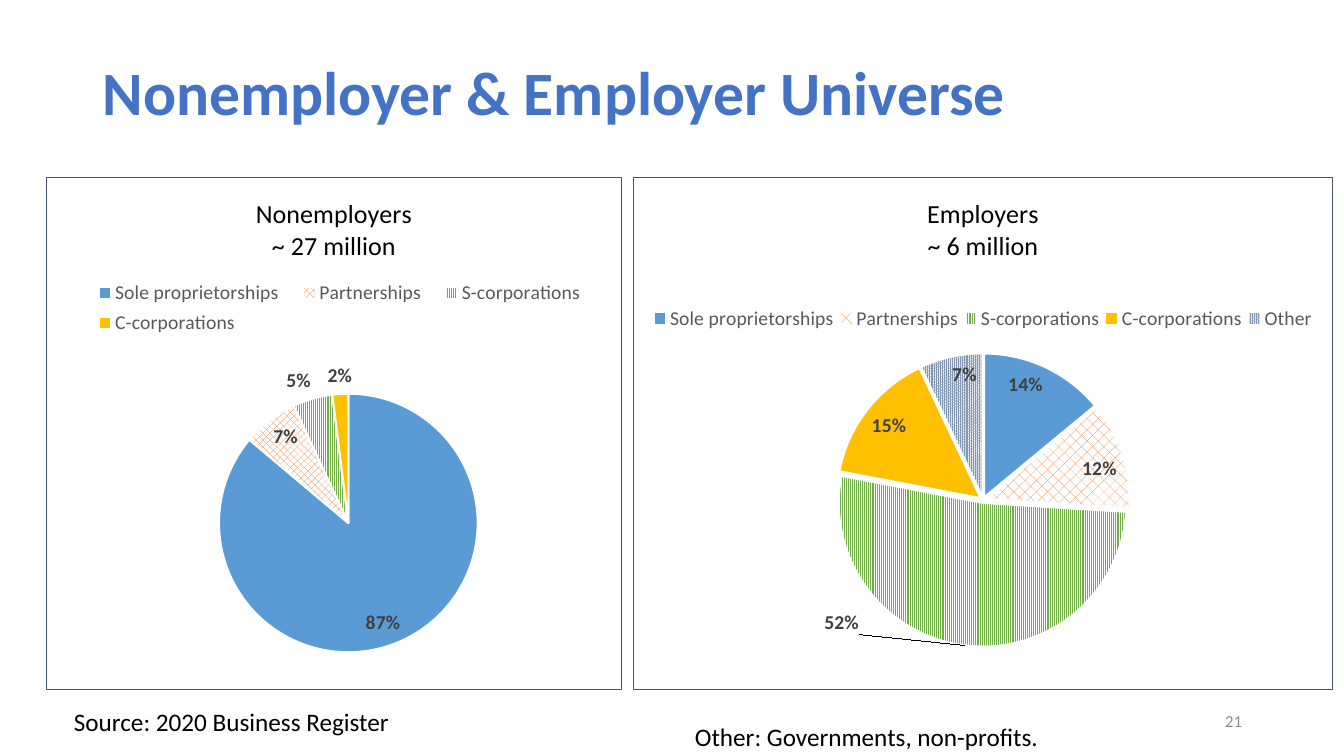
from lxml import etree
from pptx import Presentation
from pptx.chart.data import CategoryChartData
from pptx.dml.color import RGBColor
from pptx.enum.chart import XL_CHART_TYPE, XL_LABEL_POSITION, XL_LEGEND_POSITION
from pptx.enum.dml import MSO_PATTERN
from pptx.enum.text import MSO_ANCHOR, PP_ALIGN
from pptx.oxml import parse_xml
from pptx.oxml.ns import nsdecls, qn
from pptx.util import Emu, Pt

SCALE = 914400 / 100.8
FONT = "Calibri"
PIE = XL_CHART_TYPE.PIE
TOP = XL_LEGEND_POSITION.TOP
IN, OUT = XL_LABEL_POSITION.INSIDE_END, XL_LABEL_POSITION.OUTSIDE_END
P25, P50, P90 = MSO_PATTERN.PERCENT_25, MSO_PATTERN.PERCENT_50, MSO_PATTERN.PERCENT_90
VERT = MSO_PATTERN.NARROW_VERTICAL
LEFT, RIGHT = PP_ALIGN.LEFT, PP_ALIGN.RIGHT
ANCHOR_TOP, MIDDLE = MSO_ANCHOR.TOP, MSO_ANCHOR.MIDDLE

NONEMPLOYERS = [
    ("Sole proprietorships", 0.87, "5B9BD5", None, IN),
    ("Partnerships", 0.07, "ED7D31", P50, IN),
    ("S-corporations", 0.05, "70AD47", VERT, OUT),
    ("C-corporations", 0.02, "FFC000", None, OUT),
]
EMPLOYERS = [
    ("Sole proprietorships", 0.14, "5B9BD5", None, IN),
    ("Partnerships", 0.12, "ED7D31", P25, IN),
    ("S-corporations", 0.52, "70AD47", VERT, OUT),
    ("C-corporations", 0.15, "FFC000", None, IN),
    ("Other", 0.07, "8497B0", P90, IN),
]


def px(n):
    """Turn pixels into EMU."""
    return Emu(round(n * SCALE))


def rgb(value):
    """Turn a hex string into a colour."""
    return RGBColor.from_string(value)


def style(font, size, color, bold=False):
    """Set typeface, size, colour and weight of a font."""
    font.name, font.size, font.bold = FONT, Pt(size), bold
    font.color.rgb = rgb(color)


def add_text(slide, box, text, size, color="000000", bold=False,
             align=LEFT, anchor=ANCHOR_TOP, spacing=None):
    """Place one line of text in a box."""
    tf = slide.shapes.add_textbox(*map(px, box)).text_frame
    tf.word_wrap, tf.vertical_anchor = True, anchor
    p = tf.paragraphs[0]
    p.alignment, p.line_spacing = align, spacing
    r = p.add_run()
    r.text = text
    style(r.font, size, color, bold)


def set_layout(parent, index, values, inner=False):
    """Give a chart part a manual layout in fractions of the chart."""
    for old in parent.findall(qn("c:layout")):
        parent.remove(old)
    layout = parse_xml(f"<c:layout {nsdecls('c')}><c:manualLayout/></c:layout>")
    items = [("layoutTarget", "inner")] if inner else []
    if len(values) == 4:
        items += [("xMode", "edge"), ("yMode", "edge")]
    items += zip("xywh", values)
    for tag, value in items:
        etree.SubElement(layout[0], qn(f"c:{tag}")).set("val", str(value))
    parent.insert(index, layout)


def style_slices(series, slices):
    """Fill each slice and place its label."""
    for i, (_, _, color, pattern, position) in enumerate(slices):
        point = series.points[i]
        fill = point.format.fill
        if pattern is None:
            fill.solid()
        else:
            fill.patterned()
            fill.pattern = pattern
            fill.back_color.rgb = rgb("FFFFFF")
        fill.fore_color.rgb = rgb(color)
        point.format.line.color.rgb = rgb("FFFFFF")
        point.format.line.width = Pt(1.5)
        style(point.data_label.font, 14, "404040", True)
        point.data_label.position = position
    labels = series.data_labels
    labels.number_format, labels.number_format_is_linked = "0%", False
    labels.show_value = True
    style(labels.font, 14, "404040", True)


def add_pie(slide, box, title_lines, slices, legend_area, plot_area):
    """Place a framed pie chart with title and legend, and return it."""
    data = CategoryChartData(number_format="0%")
    data.categories = [s[0] for s in slices]
    data.add_series("Series 1", [s[1] for s in slices])
    chart = slide.shapes.add_chart(PIE, *map(px, box), data).chart
    style(chart.font, 10, "000000")
    chart.has_title = True
    chart.chart_title.include_in_layout = False
    tf = chart.chart_title.text_frame
    for i, line in enumerate(title_lines):
        p = tf.add_paragraph() if i else tf.paragraphs[0]
        r = p.add_run()
        r.text = line
        style(r.font, 18.6, "000000")
    chart.has_legend = True
    legend = chart.legend
    legend.position, legend.include_in_layout = TOP, False
    style(legend.font, 14, "595959")
    root = chart.element if hasattr(chart, "element") else chart._chartSpace
    set_layout(root.find(".//" + qn("c:legend")), 1, legend_area)
    set_layout(root.find(".//" + qn("c:plotArea")), 0, plot_area, True)
    style_slices(chart.plots[0].series[0], slices)
    root.find(qn("c:chart")).addnext(parse_xml(
        f'<c:spPr {nsdecls("c", "a")}>'
        '<a:solidFill><a:srgbClr val="FFFFFF"/></a:solidFill>'
        '<a:ln w="9525"><a:solidFill><a:srgbClr val="44546A"/></a:solidFill></a:ln>'
        '</c:spPr>'))
    return root


def add_nonemployers(slide, box):
    """Place the nonemployer pie."""
    add_pie(slide, box, ["Nonemployers", "~ 27 million"], NONEMPLOYERS,
            (0.06, 0.19, 0.9, 0.13), (0.3, 0.42, 0.45, 0.51))


def add_employers(slide, box):
    """Place the employer pie with parted slices and one moved label."""
    root = add_pie(slide, box, ["Employers", "~ 6 million"], EMPLOYERS,
                   (0.02, 0.25, 0.96, 0.05), (0.29, 0.34, 0.42, 0.58))
    explosion = parse_xml(f'<c:explosion {nsdecls("c")} val="2"/>')
    root.find(".//" + qn("c:dPt")).addprevious(explosion)
    set_layout(root.findall(".//" + qn("c:dLbl"))[2], 1, (-0.15, -0.08))


def main():
    """Build the slide and save it."""
    prs = Presentation()
    prs.slide_width, prs.slide_height = px(1344), px(756)
    slide = prs.slides.add_slide(prs.slide_layouts[6])
    add_text(slide, (93, 40, 1159, 112), "Nonemployer & Employer Universe",
             44, "4472C4", True, anchor=MIDDLE, spacing=0.9)
    add_nonemployers(slide, (46, 177, 576, 513))
    add_text(slide, (950, 701, 302, 40), "21", 12, "8C8C8C",
             align=RIGHT, anchor=MIDDLE)
    add_employers(slide, (633, 177, 700, 513))
    add_text(slide, (64, 701, 422, 40), "Source: 2020 Business Register", 18)
    add_text(slide, (685, 716, 421, 40), "Other: Governments, non-profits.", 18)
    prs.save("out.pptx")


if __name__ == "__main__":
    main()
